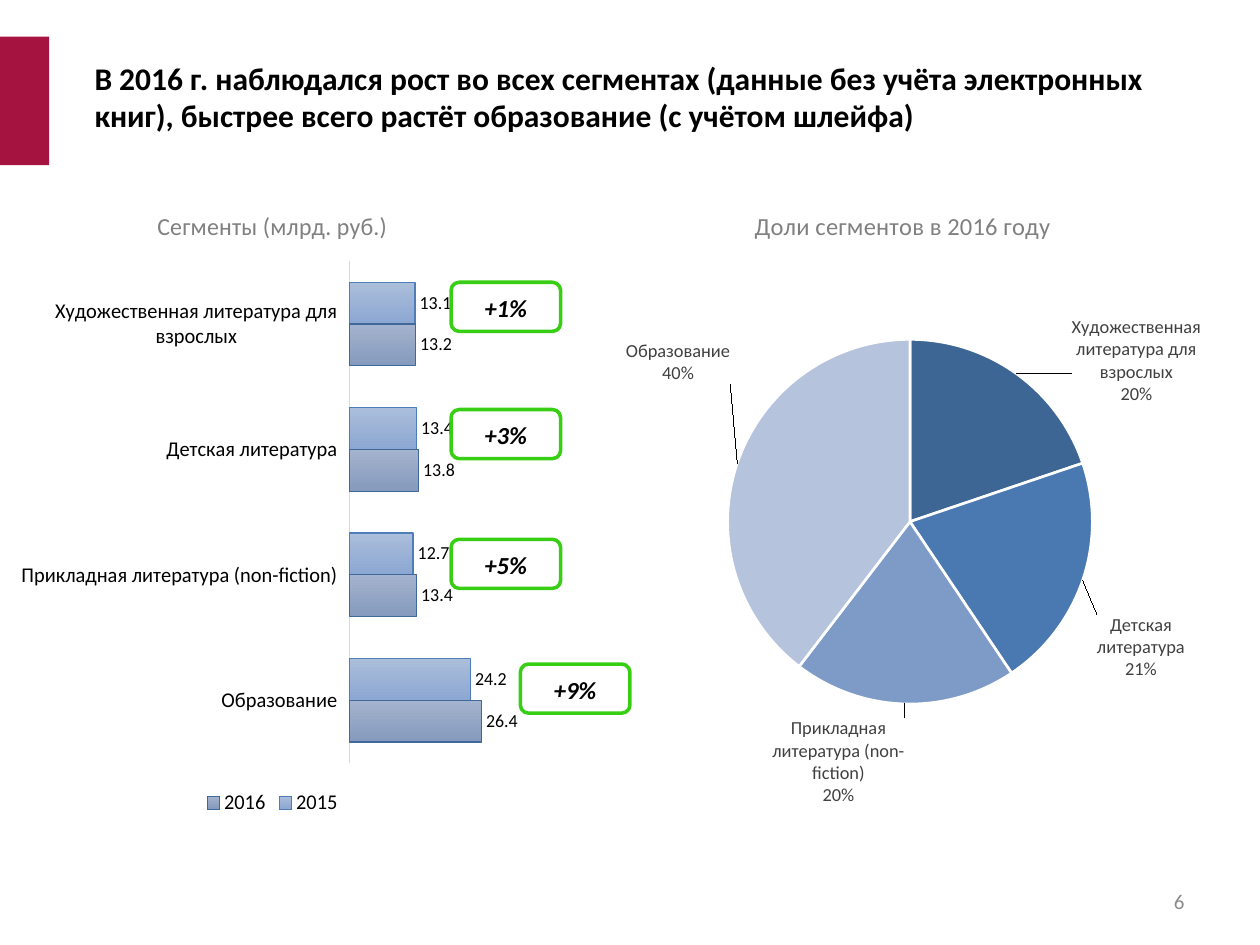
from dataclasses import dataclass

from lxml import etree
from pptx import Presentation
from pptx.chart.chart import Chart
from pptx.chart.data import CategoryChartData
from pptx.dml.color import RGBColor
from pptx.enum.chart import XL_CHART_TYPE, XL_LABEL_POSITION, XL_LEGEND_POSITION
from pptx.enum.chart import XL_TICK_LABEL_POSITION, XL_TICK_MARK
from pptx.enum.shapes import MSO_SHAPE
from pptx.enum.text import MSO_ANCHOR, MSO_AUTO_SIZE, PP_ALIGN
from pptx.oxml import parse_xml
from pptx.oxml.ns import nsdecls, qn
from pptx.util import Inches, Pt

BAR, PIE = XL_CHART_TYPE.BAR_CLUSTERED, XL_CHART_TYPE.PIE
BEST, OUT = XL_LABEL_POSITION.BEST_FIT, XL_LABEL_POSITION.OUTSIDE_END
BOTTOM = XL_LEGEND_POSITION.BOTTOM
LOW, NO_TICK = XL_TICK_LABEL_POSITION.LOW, XL_TICK_MARK.NONE
RECT, ROUND = MSO_SHAPE.RECTANGLE, MSO_SHAPE.ROUNDED_RECTANGLE
MIDDLE = MSO_ANCHOR.MIDDLE
GROW, FIXED = MSO_AUTO_SIZE.SHAPE_TO_FIT_TEXT, MSO_AUTO_SIZE.NONE
LEFT, CENTER, RIGHT = PP_ALIGN.LEFT, PP_ALIGN.CENTER, PP_ALIGN.RIGHT

BLACK = RGBColor(0x00, 0x00, 0x00)
WHITE = RGBColor(0xFF, 0xFF, 0xFF)
WINE = RGBColor(0xA5, 0x13, 0x40)
GREEN = RGBColor(0x37, 0xCE, 0x14)
GRAY = RGBColor(0x80, 0x80, 0x80)
DARK = RGBColor(0x40, 0x40, 0x40)
PALE = RGBColor(0xD9, 0xD9, 0xD9)
PAGE = RGBColor(0x8C, 0x8C, 0x8C)

FONT = "Calibri"
CELL = 0.1


@dataclass
class Badge:
    text: str
    col: float
    row: float


@dataclass
class Year:
    name: str
    vals: tuple[float, ...]
    top: RGBColor
    base: RGBColor
    edge: RGBColor


@dataclass
class Slice:
    share: float
    color: RGBColor
    dx: float
    dy: float


NAMES = (
    "Художественная литература для взрослых",
    "Детская литература",
    "Прикладная литература (non-fiction)",
    "Образование",
)
BADGES = (
    Badge("+1%", 35.8, 22.4),
    Badge("+3%", 35.8, 32.5),
    Badge("+5%", 35.8, 42.8),
    Badge("+9%", 41.3, 52.7),
)
YEARS = (
    Year("2015", (13.1, 13.4, 12.7, 24.2), RGBColor(0xAB, 0xBE, 0xDB),
         RGBColor(0x8C, 0xA7, 0xD2), RGBColor(0x4D, 0x7E, 0xB9)),
    Year("2016", (13.2, 13.8, 13.4, 26.4), RGBColor(0xA4, 0xB3, 0xCE),
         RGBColor(0x85, 0x9A, 0xBD), RGBColor(0x40, 0x69, 0x99)),
)
SLICES = (
    Slice(0.2, RGBColor(0x3E, 0x66, 0x95), 0.07, 0.06),
    Slice(0.21, RGBColor(0x4A, 0x79, 0xB1), 0.01, 0.05),
    Slice(0.2, RGBColor(0x7E, 0x9B, 0xC8), -0.09, 0.01),
    Slice(0.4, RGBColor(0xB6, 0xC3, 0xDC), 0, -0.12),
)


def grid(col: float, row: float, cols: float, rows: float) -> tuple:
    return tuple(Inches(n * CELL) for n in (col, row, cols, rows))


def style(font, size: float, color: RGBColor) -> None:
    font.name, font.size = FONT, Pt(size)
    font.color.rgb = color


def write(shape, text: str, size: float, color: RGBColor, align, bold=False, slant=False):
    frame = shape.text_frame
    frame.word_wrap = True
    frame.auto_size = FIXED
    frame.vertical_anchor = MIDDLE
    para = frame.paragraphs[0]
    para.alignment = align
    run = para.add_run()
    run.text = text
    style(run.font, size, color)
    run.font.bold, run.font.italic = bold, slant
    return para


def block(slide, kind, spot: tuple, fill: RGBColor):
    shape = slide.shapes.add_shape(kind, *spot)
    shape.shadow.inherit = False
    shape.fill.solid()
    shape.fill.fore_color.rgb = fill
    shape.line.fill.background()
    return shape


def stamp(slide, badge: Badge) -> None:
    shape = block(slide, ROUND, grid(badge.col, badge.row, 8.7, 3.9), WHITE)
    shape.line.color.rgb = GREEN
    shape.line.width = Pt(2)
    para = write(shape, badge.text, 14, BLACK, CENTER, True, True)
    para.line_spacing = Pt(18)
    shape.text_frame.auto_size = GROW


def place(chart: Chart, x: float, y: float, w: float, h: float) -> None:
    area = chart._chartSpace.chart.plotArea
    for old in area.findall(qn("c:layout")):
        area.remove(old)
    parts = "".join(f'<c:{k} val="{v}"/>' for k, v in zip("xywh", (x, y, w, h)))
    area.insert(0, parse_xml(
        f'<c:layout {nsdecls("c")}><c:manualLayout><c:layoutTarget val="inner"/>'
        f'<c:xMode val="edge"/><c:yMode val="edge"/>{parts}'
        '</c:manualLayout></c:layout>'))


def plot(slide, kind, spot: tuple, title: str, rows: dict) -> Chart:
    data = CategoryChartData()
    data.categories = NAMES
    for name, vals in rows.items():
        data.add_series(name, vals)
    chart = slide.shapes.add_chart(kind, *spot, data).chart
    style(chart.font, 10, BLACK)
    chart.has_title = True
    run = chart.chart_title.text_frame.paragraphs[0].add_run()
    run.text = title
    style(run.font, 14, GRAY)
    run.font.bold = False
    chart.chart_title.include_in_layout = False
    chart.has_legend = False
    return chart


def label(owner, form: str, color: RGBColor, spot):
    tags = owner.data_labels
    tags.show_value = True
    tags.number_format, tags.number_format_is_linked = form, False
    tags.position = spot
    style(tags.font, 10.5, color)
    return tags


def draw_pie(slide) -> None:
    chart = plot(slide, PIE, grid(42.7, 14.7, 57.9, 50.4),
                 "Доли сегментов в 2016 году",
                 {"Series 1": [part.share for part in SLICES]})
    place(chart, 0.26, 0.24, 0.5, 0.58)
    chart.plots[0].vary_by_categories = True
    series = chart.plots[0].series[0]
    tags = label(series, "0%", DARK, BEST)
    tags.show_category_name = True
    node = series._element.find(qn("c:dLbls"))
    shows = "".join(
        f'<c:show{k} val="{v}"/>' for k, v in
        (("LegendKey", 0), ("Val", 1), ("CatName", 1), ("SerName", 0),
         ("Percent", 0), ("BubbleSize", 0)))
    for i, part in enumerate(SLICES):
        point = series.points[i].format
        point.fill.solid()
        point.fill.fore_color.rgb = part.color
        point.line.color.rgb = WHITE
        point.line.width = Pt(1.5)
        node.insert(i, parse_xml(
            f'<c:dLbl {nsdecls("c")}><c:idx val="{i}"/><c:layout><c:manualLayout>'
            f'<c:x val="{part.dx}"/><c:y val="{part.dy}"/></c:manualLayout></c:layout>'
            f'<c:dLblPos val="bestFit"/>{shows}<c:separator>\n</c:separator></c:dLbl>'))
    for old in node.findall(qn("c:showLeaderLines")):
        node.remove(old)
    etree.SubElement(node, qn("c:separator")).text = "\n"
    etree.SubElement(node, qn("c:showLeaderLines")).set("val", "1")


def draw_bars(slide) -> None:
    chart = plot(slide, BAR, grid(1.7, 14.7, 39.4, 50.4), "Сегменты (млрд. руб.)",
                 {year.name: year.vals for year in YEARS})
    place(chart, 0.66, 0.12, 0.31, 0.79)
    chart.has_legend = True
    chart.legend.position = BOTTOM
    chart.legend.include_in_layout = False
    style(chart.legend.font, 12, BLACK)
    axis = chart.category_axis
    axis.reverse_order = True
    axis.major_tick_mark = NO_TICK
    axis.tick_label_position = LOW
    axis.format.line.color.rgb = PALE
    axis.format.line.width = Pt(0.75)
    style(axis.tick_labels.font, 12, BLACK)
    scale = chart.value_axis
    scale.minimum_scale, scale.maximum_scale = 0, 30
    scale.has_major_gridlines = False
    scale.visible = False
    bars = chart.plots[0]
    bars.gap_width, bars.overlap = 100, 0
    bars.vary_by_categories = False
    for year, series in zip(YEARS, bars.series):
        fill = series.format.fill
        fill.gradient()
        fill.gradient_angle = 270
        for stop, color in zip(fill.gradient_stops, (year.top, year.base)):
            stop.color.rgb = color
        series.format.line.color.rgb = year.edge
        series.format.line.width = Pt(0.75)
        label(series, "#,##0.0", BLACK, OUT)


def main() -> None:
    deck = Presentation()
    deck.slide_width, deck.slide_height = Inches(10), Inches(7.5)
    slide = deck.slides.add_slide(deck.slide_layouts[5])
    draw_pie(slide)
    block(slide, RECT, grid(0, 2.9, 3.9, 10.2), WINE)
    head = slide.shapes.title
    head.left, head.top, head.width, head.height = grid(6.5, 1.4, 86.1, 12.5)
    write(head, "В 2016 г. наблюдался рост во всех сегментах (данные без учёта "
          "электронных книг), быстрее всего растёт образование (с учётом шлейфа)",
          18, BLACK, LEFT, True)
    draw_bars(slide)
    for badge in BADGES:
        stamp(slide, badge)
    write(slide.shapes.add_textbox(*grid(71.7, 69.5, 23.3, 4)), "6", 12, PAGE, RIGHT)
    deck.save("out.pptx")


if __name__ == "__main__":
    main()
